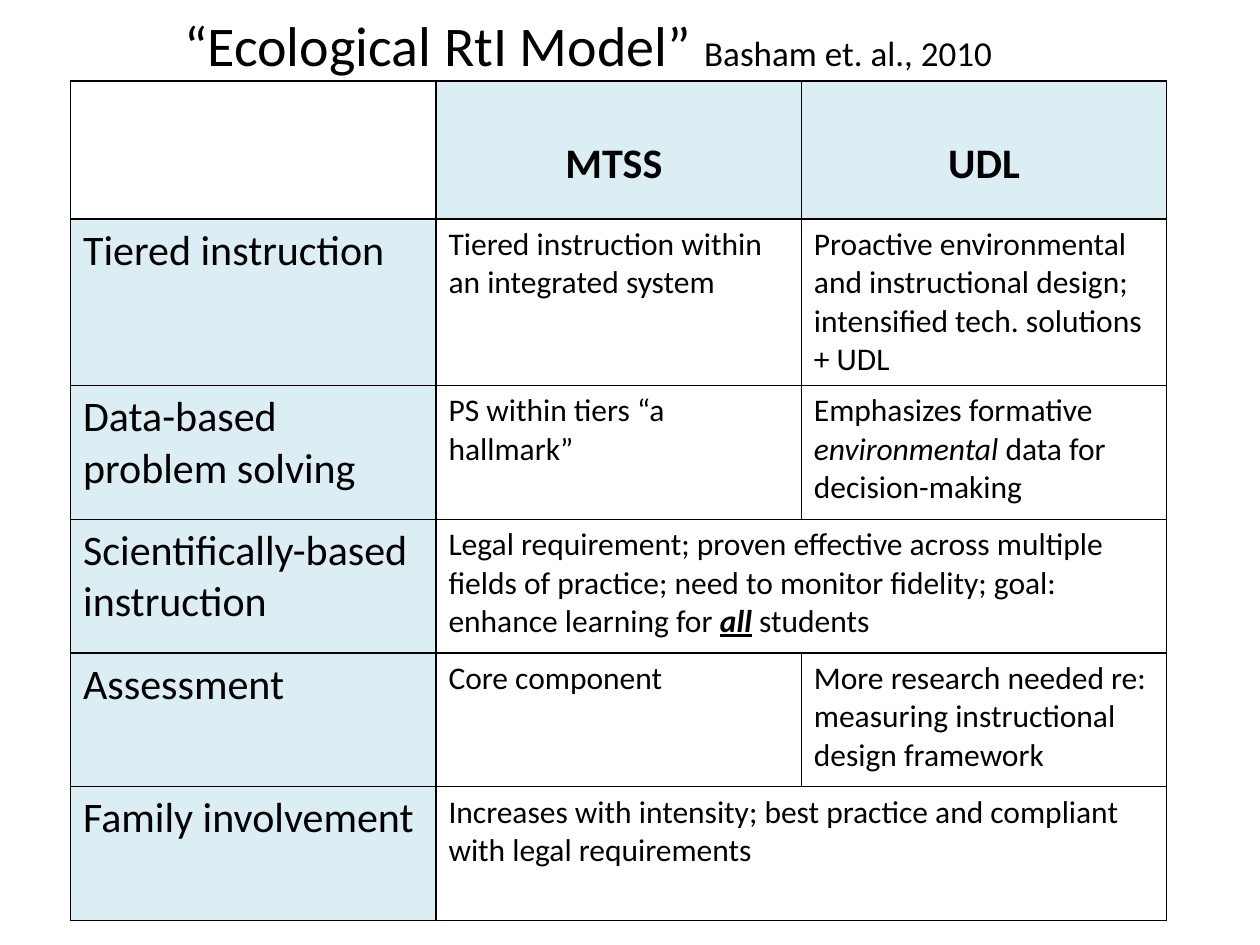
from pptx import Presentation
from pptx.dml.color import RGBColor
from pptx.enum.text import MSO_ANCHOR, PP_ALIGN
from pptx.oxml import parse_xml
from pptx.util import Pt

CENTER, LEFT = PP_ALIGN.CENTER, PP_ALIGN.LEFT
MIDDLE = MSO_ANCHOR.MIDDLE
NS = "http://schemas.openxmlformats.org/drawingml/2006/main"
BLACK, PALE_BLUE = "000000", "DBEEF4"


def add_run(p, text, size=18, bold=False, italic=False, underline=False, color=BLACK):
    r = p.add_run()
    r.text = text
    f = r.font
    f.name, f.size = "Calibri", Pt(size)
    f.bold, f.italic, f.underline = bold, italic, underline
    f.color.rgb = RGBColor.from_string(color)


def format_cell(cell, fill):
    tcPr = cell._tc.get_or_add_tcPr()
    for side in ("lnL", "lnR", "lnT", "lnB"):
        tcPr.append(parse_xml(
            f'<a:{side} xmlns:a="{NS}" w="{Pt(1)}"><a:solidFill>'
            f'<a:srgbClr val="{BLACK}"/></a:solidFill></a:{side}>'))
    if fill:
        cell.fill.solid()
        cell.fill.fore_color.rgb = RGBColor.from_string(fill)
    else:
        cell.fill.background()


prs = Presentation()
prs.slide_width, prs.slide_height = Pt(720), Pt(540)
s = prs.slides.add_slide(prs.slide_layouts[5])

title = s.shapes.title
title.left, title.top, title.width, title.height = Pt(98), Pt(2), Pt(557), Pt(46)
tf = title.text_frame
tf.word_wrap = True
tf.vertical_anchor = MIDDLE
tf.margin_top = tf.margin_bottom = 0
p = tf.paragraphs[0]
p.alignment = LEFT
add_run(p, "“Ecological RtI Model” ", size=32)
add_run(p, "Basham et. al., 2010", size=20)

emphasis = {"italic": True}
strong = {"bold": True, "italic": True, "underline": True}
rows = [
    ["", "MTSS ", "UDL"],
    ["Tiered instruction", "Tiered instruction within an integrated system",
     "Proactive environmental and instructional design; intensified tech. solutions + UDL"],
    ["Data-based problem solving", "PS within tiers “a hallmark”",
     [("Emphasizes formative ", {}), ("environmental", emphasis),
      (" data for decision-making", {})]],
    ["Scientifically-based instruction",
     [("Legal requirement; proven effective across multiple fields of practice; "
       "need to monitor fidelity; goal: enhance learning for ", {}),
      ("all", strong), (" students", {})]],
    ["Assessment", "Core component",
     "More research needed re: measuring instructional design framework"],
    ["Family involvement",
     "Increases with intensity; best practice and compliant with legal requirements"],
]
heights = [79, 88.5] + [76.4] * 4

frame = s.shapes.add_table(len(rows), 3, Pt(40.3), Pt(46.3), Pt(626.4), Pt(sum(heights)))
table = frame.table
table.first_row = table.horz_banding = False
for column in table.columns:
    column.width = Pt(208.8)

for i, row in enumerate(rows):
    table.rows[i].height = Pt(heights[i])
    if len(row) == 2:
        table.cell(i, 1).merge(table.cell(i, 2))
    for j in range(3):
        header, label = i == 0, j == 0
        cell = table.cell(i, j)
        format_cell(cell, PALE_BLUE if header != label else None)
        if j >= len(row) or not row[j]:
            continue
        p = cell.text_frame.paragraphs[0]
        if header:
            cell.margin_top = Pt(33)
            p.alignment = CENTER
        parts = [(row[j], {})] if isinstance(row[j], str) else row[j]
        for text, style in parts:
            base = {"size": 24 if header or label else 18, "bold": header}
            add_run(p, text, **{**base, **style})

prs.save("out.pptx")
